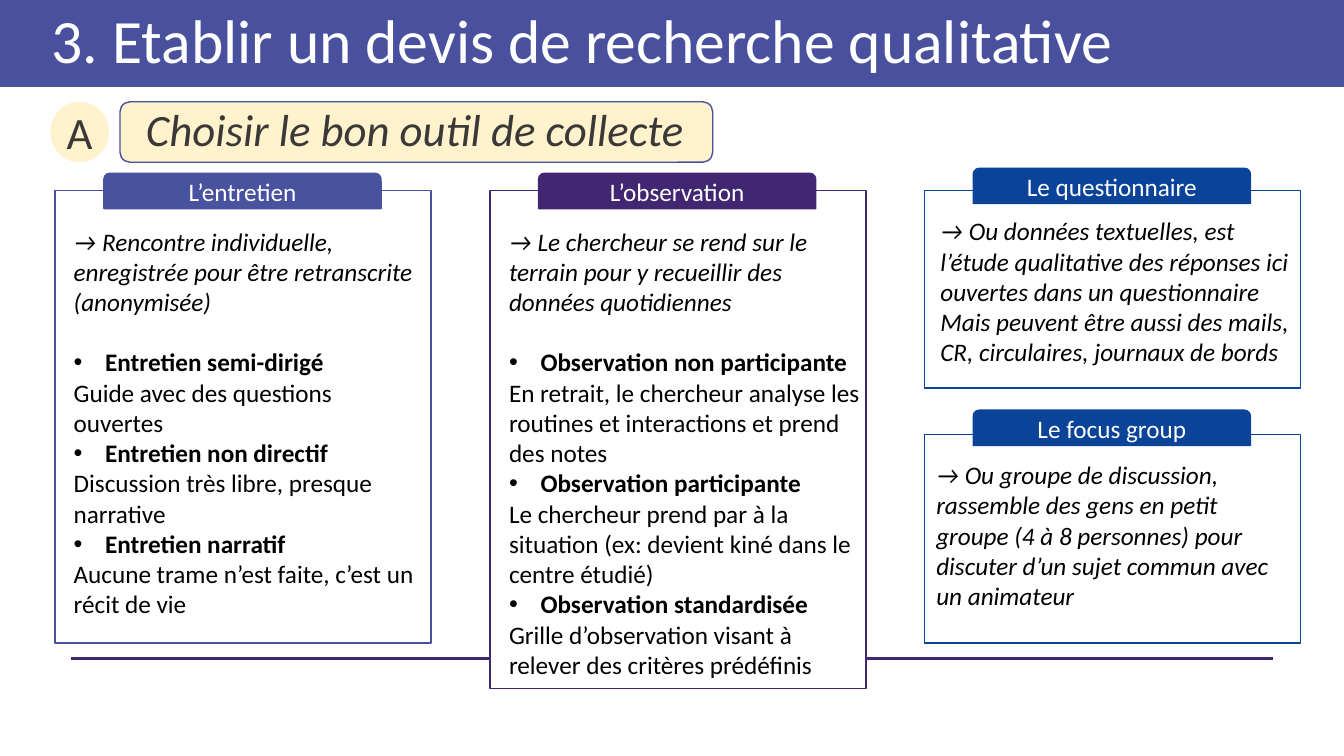
from lxml.etree import SubElement
from pptx import Presentation
from pptx.dml.color import RGBColor
from pptx.enum.shapes import MSO_CONNECTOR as Conn, MSO_SHAPE as Shape
from pptx.enum.text import MSO_ANCHOR as Anchor, MSO_AUTO_SIZE as Auto, PP_ALIGN as Align
from pptx.oxml.ns import qn
from pptx.util import Pt

INDIGO, PURPLE, BLUE = "49519E", "412672", "0A4398"
CREAM, GREY, WHITE, BLACK = "FFF2CC", "3B3838", "FFFFFF", "000000"
COLUMN_LEFT, COLUMN_STEP, COLUMN_WIDTH = 39.4, 310.5, 268.6
TAB_INSET, TAB_WIDTH, TAB_HEIGHT = 34.8, 198, 25.2
TEXT_WIDTH, LINE_GAP, BULLET_INDENT = 265, 21.6, 22.5


def rgb(value):
    return RGBColor.from_string(value)


class Deck:
    font = "Calibri"

    def __init__(self):
        self.prs = Presentation()
        self.prs.slide_width, self.prs.slide_height = Pt(960), Pt(540)
        self.slide = self.prs.slides.add_slide(self.prs.slide_layouts[3])
        self.shapes = self.slide.shapes

    def place(self, sp, box):
        sp.left, sp.top, sp.width, sp.height = (Pt(v) for v in box)
        self.shapes._spTree.append(sp._element)

    def style(self, p, size, color, italic=False, bold=False):
        for r in p.runs:
            f = r.font
            f.name, f.size, f.italic, f.bold = self.font, Pt(size), italic, bold
            f.color.rgb = rgb(color)

    def line(self, x1, x2, y, color, width):
        cn = self.shapes.add_connector(Conn.STRAIGHT, Pt(x1), Pt(y), Pt(x2), Pt(y))
        cn.line.color.rgb, cn.line.width = rgb(color), Pt(width)
        SubElement(cn._element.spPr, qn("a:effectLst"))

    def shape(self, kind, box, fill=None, line=None, text="", size=18, color=WHITE):
        sp = self.shapes.add_shape(kind, *(Pt(v) for v in box))
        sp.shadow.inherit = False
        if fill:
            sp.fill.solid()
            sp.fill.fore_color.rgb = rgb(fill)
        else:
            sp.fill.background()
        if line:
            sp.line.color.rgb, sp.line.width = rgb(line), Pt(1)
        else:
            sp.line.fill.background()
        if text:
            tf = sp.text_frame
            tf.margin_left = tf.margin_right = tf.margin_top = tf.margin_bottom = 0
            tf.vertical_anchor = Anchor.MIDDLE
            p = tf.paragraphs[0]
            p.text, p.alignment = text, Align.CENTER
            self.style(p, size, color)

    def title(self, text, box, fill):
        sp = self.shapes.title
        self.place(sp, box)
        sp.fill.solid()
        sp.fill.fore_color.rgb = rgb(fill)
        tf = sp.text_frame
        tf.text = text
        tf.auto_size, tf.vertical_anchor = Auto.NONE, Anchor.MIDDLE
        tf.margin_left = Pt(37)
        p = tf.paragraphs[0]
        p.alignment, p.line_spacing = Align.LEFT, 0.9
        self.style(p, 44, WHITE)

    def text(self, paragraphs, box, size=18, color=BLACK):
        sp = self.shapes.add_textbox(*(Pt(v) for v in box))
        tf = sp.text_frame
        tf.word_wrap = True
        tf.text = "\n".join(paragraphs)
        for p in tf.paragraphs:
            self.style(p, size, color, italic=True)

    def body(self, idx, lead, items, box):
        sp = self.slide.placeholders[idx]
        self.place(sp, box)
        tf = sp.text_frame
        tf.auto_size, tf.vertical_anchor = Auto.NONE, Anchor.TOP
        tf.text = "\n".join([lead] + [t for item in items for t in item])
        for i, p in enumerate(tf.paragraphs):
            bullet = i % 2 == 1
            p.alignment = Align.LEFT
            p.space_before = Pt(LINE_GAP if i == 1 else 0)
            pPr = p._p.get_or_add_pPr()
            indent = Pt(BULLET_INDENT) if bullet else 0
            pPr.set("marL", str(indent))
            pPr.set("indent", str(-indent))
            if bullet:
                SubElement(pPr, qn("a:buFont"), typeface="Arial")
                SubElement(pPr, qn("a:buChar"), char="•")
            else:
                SubElement(pPr, qn("a:buNone"))
            self.style(p, 18, BLACK, italic=i == 0, bold=bullet)

    def panel(self, column, top, height, tab_top, name, color, tab_color=None, fill=None):
        left = COLUMN_LEFT + column * COLUMN_STEP
        tab_color = tab_color or color
        self.shape(Shape.RECTANGLE, (left, top, COLUMN_WIDTH, height), fill, color)
        self.shape(Shape.ROUND_2_SAME_RECTANGLE,
                   (left + TAB_INSET, tab_top, TAB_WIDTH, TAB_HEIGHT),
                   tab_color, tab_color, name)


def main():
    d = Deck()
    d.line(50.4, 909.4, 470.2, PURPLE, 2.25)
    d.title("3. Etablir un devis de recherche qualitative", (0, 0, 960, 62), INDIGO)
    d.shape(Shape.ROUNDED_RECTANGLE, (85.7, 72.7, 423.4, 43.2), CREAM, INDIGO)
    d.text(["Choisir le bon outil de collecte"], (97.2, 69.1, 405.4, 46), 32, GREY)
    d.shape(Shape.OVAL, (36, 72.7, 41.8, 43.2), CREAM, None, "A", 32, GREY)

    d.panel(0, 136.1, 323.3, 123.8, "L’entretien", INDIGO, "49529E")
    d.panel(1, 136.1, 355.7, 123.8, "L’observation", PURPLE, fill=WHITE)
    d.panel(2, 136.1, 141.1, 120.2, "Le questionnaire", BLUE)
    d.panel(2, 310.3, 149, 293, "Le focus group", BLUE)

    d.body(1, "→ Rencontre individuelle, enregistrée pour être retranscrite (anonymisée)", [
        ("Entretien semi-dirigé", "Guide avec des questions ouvertes"),
        ("Entretien non directif", "Discussion très libre, presque narrative"),
        ("Entretien narratif", "Aucune trame n’est faite, c’est un récit de vie"),
    ], (45.4, 157.7, TEXT_WIDTH, 291))
    d.body(2, "→ Le chercheur se rend sur le terrain pour y recueillir des données quotidiennes", [
        ("Observation non participante",
         "En retrait, le chercheur analyse les routines et interactions et prend des notes"),
        ("Observation participante",
         "Le chercheur prend par à la situation (ex: devient kiné dans le centre étudié)"),
        ("Observation standardisée",
         "Grille d’observation visant à relever des critères prédéfinis"),
    ], (356.4, 157.7, TEXT_WIDTH, 334))
    d.text([
        "→ Ou données textuelles, est l’étude qualitative des réponses ici ouvertes "
        "dans un questionnaire",
        "Mais peuvent être aussi des mails, CR, circulaires, journaux de bords",
    ], (664.6, 150.5, TEXT_WIDTH, 117))
    d.text([
        "→ Ou groupe de discussion, rassemble des gens en petit groupe (4 à 8 personnes) "
        "pour discuter d’un sujet commun avec un animateur",
    ], (661.7, 324.7, TEXT_WIDTH, 117))
    d.prs.save("out.pptx")


if __name__ == "__main__":
    main()
